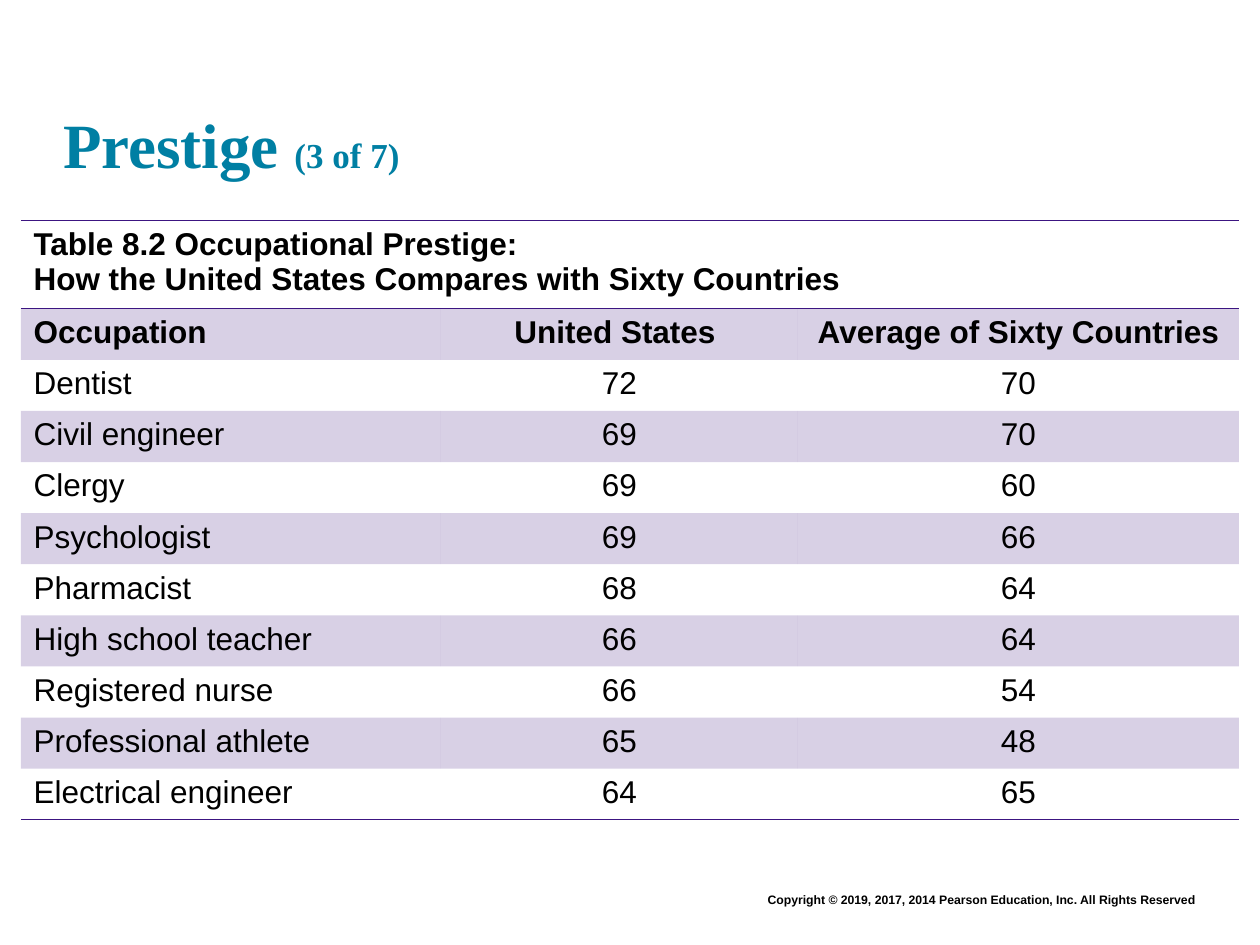
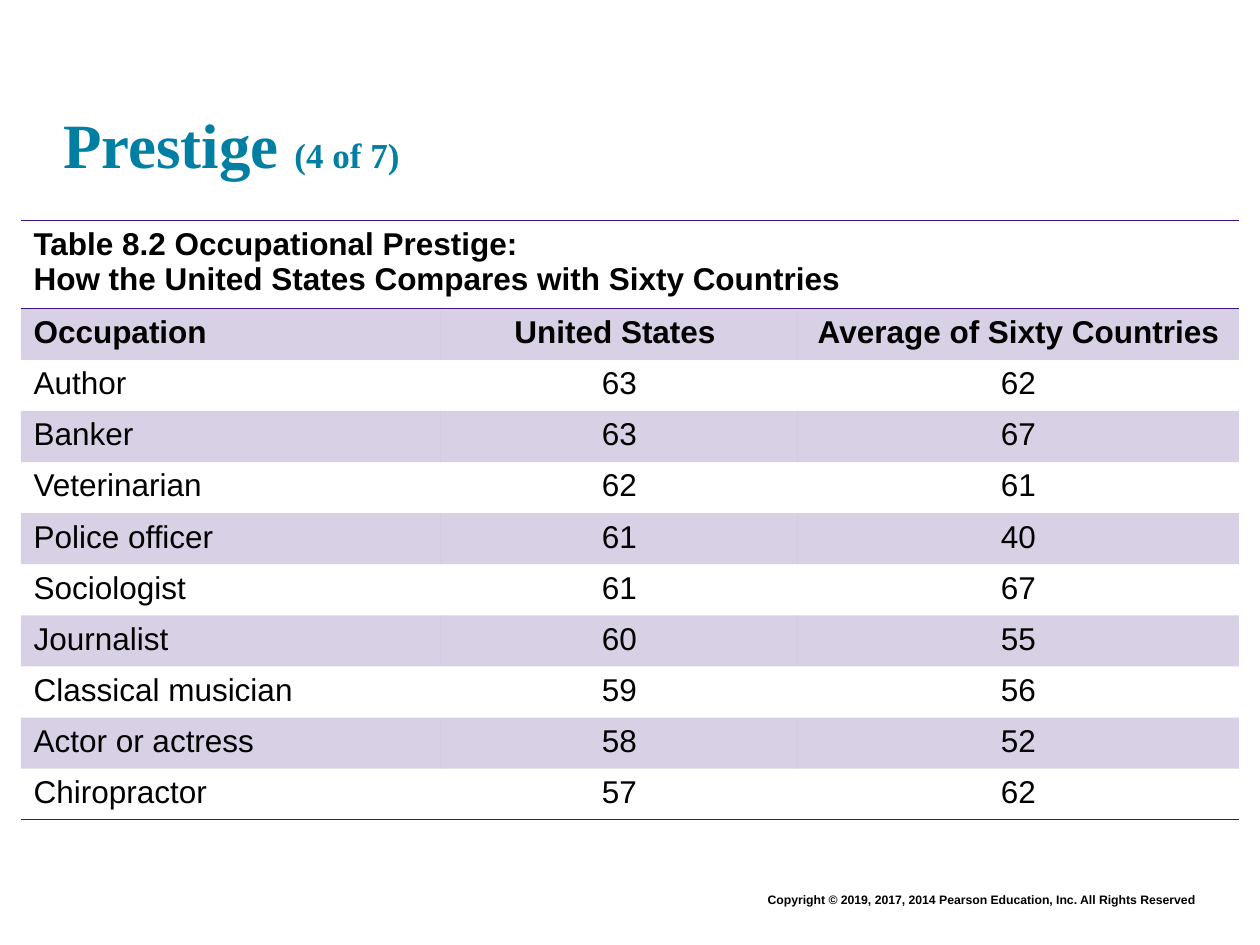
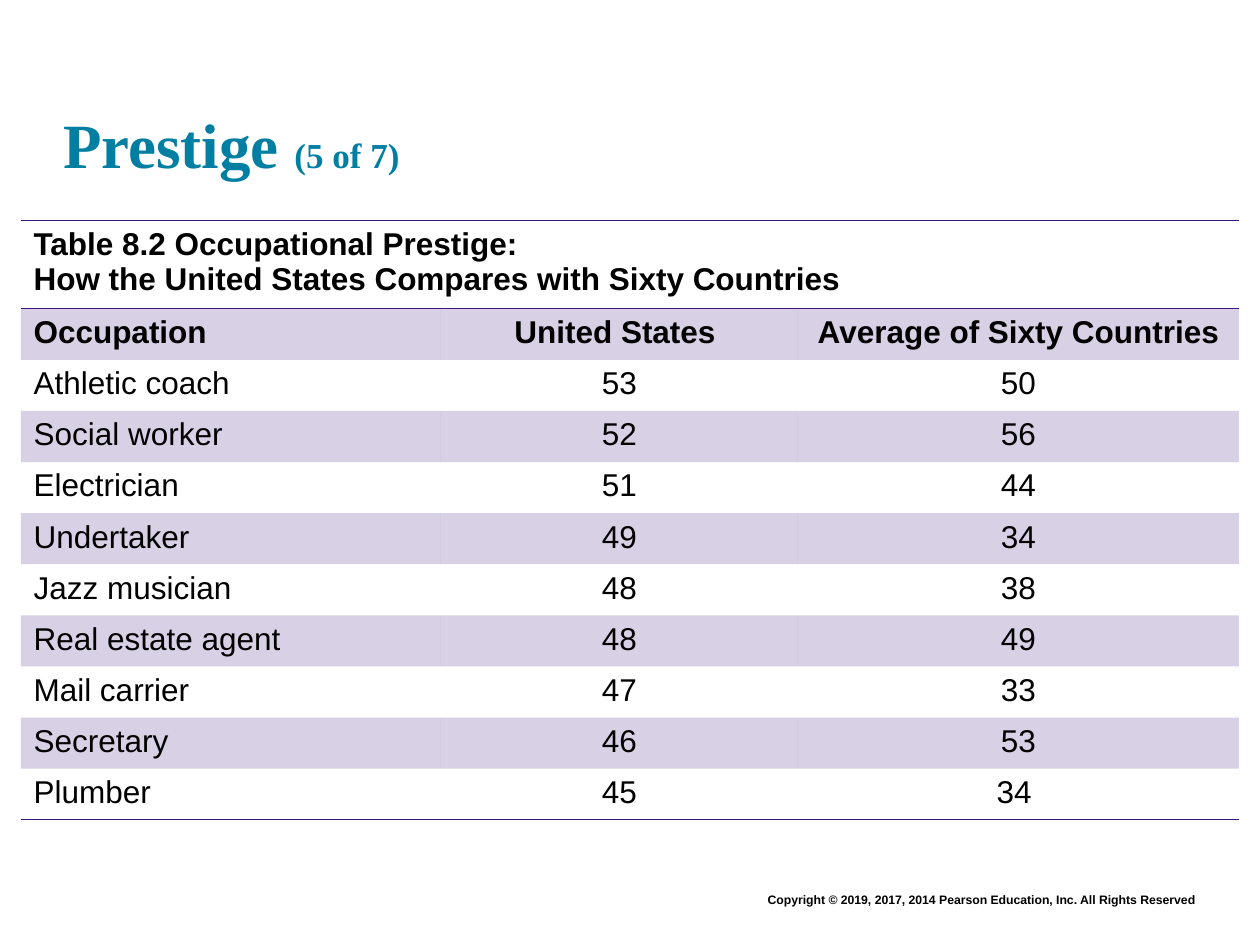
from dataclasses import dataclass
from typing import Any

from lxml import etree
from pptx import Presentation
from pptx.dml.color import RGBColor
from pptx.enum.text import MSO_ANCHOR, PP_ALIGN
from pptx.oxml.ns import qn
from pptx.util import Pt

LEFT, CENTER, RIGHT = PP_ALIGN.LEFT, PP_ALIGN.CENTER, PP_ALIGN.RIGHT
TOP, BOTTOM = MSO_ANCHOR.TOP, MSO_ANCHOR.BOTTOM
BLANK = 6
PLAIN = "{2D5ABB26-0587-4C30-8999-92F81FD0307C}"


@dataclass(frozen=True)
class Theme:
    ink: str = "000000"
    teal: str = "007FA3"
    plum: str = "3C1581"
    tint: int = 20
    serif: str = "Times New Roman"
    sans: str = "Arial"
    head: float = 36
    count: float = 20
    body: float = 18
    foot: float = 7
    rule: float = 1


@dataclass(frozen=True)
class Box:
    left: float
    top: float
    width: float
    height: float


@dataclass(frozen=True)
class Run:
    text: str
    size: float
    face: str
    color: str
    bold: bool = True


@dataclass(frozen=True)
class Job:
    name: str
    home: str
    world: str


@dataclass(frozen=True)
class Page:
    count: str
    jobs: tuple[Job, ...]


THEME = Theme()
TITLE = Box(36, 17.28, 672, 86.4)
GRID = Box(12, 126, 696, 342.72)
FOOTER = Box(126, 506.16, 564, 15.84)
COLS = (240, 204, 252)
ROW = 29.2
CAPTION = (
    "Table 8.2 Occupational Prestige:",
    "How the United States Compares with Sixty Countries",
)
HEADS = Job("Occupation", "United States ", "Average of Sixty Countries")
RIGHTS = "Copyright © 2019, 2017, 2014 Pearson Education, Inc. All Rights Reserved"

PAGES = (
    Page("(3 of 7)", (
        Job("Dentist", "72", "70"),
        Job("Civil engineer", "69", "70"),
        Job("Clergy", "69", "60"),
        Job("Psychologist", "69", "66"),
        Job("Pharmacist", "68", "64"),
        Job("High school teacher", "66", "64"),
        Job("Registered nurse", "66", "54"),
        Job("Professional athlete", "65", "48"),
        Job("Electrical engineer", "64", "65"),
    )),
    Page("(4 of 7)", (
        Job("Author", "63", "62"),
        Job("Banker", "63", "67"),
        Job("Veterinarian", "62", "61"),
        Job("Police officer", "61", "40"),
        Job("Sociologist", "61", "67"),
        Job("Journalist", "60", "55"),
        Job("Classical musician", "59", "56"),
        Job("Actor or actress", "58", "52"),
        Job("Chiropractor", "57", "62"),
    )),
    Page("(5 of 7)", (
        Job("Athletic coach", "53", "50"),
        Job("Social worker", "52", "56"),
        Job("Electrician", "51", "44"),
        Job("Undertaker", "49", "34"),
        Job("Jazz musician", "48", "38"),
        Job("Real estate agent", "48", "49"),
        Job("Mail carrier", "47", "33"),
        Job("Secretary", "46", "53"),
        Job("Plumber", "45", "34 "),
    )),
)


def apply(item: Any, form: dict[str, Any]) -> None:
    for key, value in form.items():
        setattr(item, key, value)


def place(box: Box) -> tuple[Pt, Pt, Pt, Pt]:
    return Pt(box.left), Pt(box.top), Pt(box.width), Pt(box.height)


def write(para: Any, runs: list[Run], align: PP_ALIGN) -> None:
    para.alignment = align
    for part in runs:
        run = para.add_run()
        run.text = part.text
        apply(run.font, {"size": Pt(part.size), "name": part.face, "bold": part.bold})
        run.font.color.rgb = RGBColor.from_string(part.color)


def add_text(slide: Any, box: Box, runs: list[Run], align: PP_ALIGN,
             form: dict[str, Any]) -> None:
    frame = slide.shapes.add_textbox(*place(box)).text_frame
    apply(frame, {"word_wrap": True, **form})
    write(frame.paragraphs[0], runs, align)


def fill_cell(cell: Any, tinted: bool) -> None:
    if not tinted:
        cell.fill.background()
        return
    cell.fill.solid()
    cell.fill.fore_color.rgb = RGBColor.from_string(THEME.plum)
    color = cell._tc.tcPr.find(".//" + qn("a:srgbClr"))
    etree.SubElement(color, qn("a:alpha"), val=str(THEME.tint * 1000))


def rule_cell(cell: Any, side: str) -> None:
    line = etree.Element(qn(f"a:ln{side}"), w=str(Pt(THEME.rule)))
    fill = etree.SubElement(line, qn("a:solidFill"))
    etree.SubElement(fill, qn("a:srgbClr"), val=THEME.plum)
    cell._tc.get_or_add_tcPr().insert(0, line)


def body(text: str, bold: bool) -> list[Run]:
    return [Run(text, THEME.body, THEME.sans, THEME.ink, bold)]


def add_grid(slide: Any, jobs: tuple[Job, ...]) -> None:
    rows = (HEADS, *jobs)
    shape = slide.shapes.add_table(len(rows) + 1, len(COLS), *place(GRID))
    table = shape.table
    apply(table, {"first_row": False, "horz_banding": False})
    table._tbl.tblPr.find(qn("a:tableStyleId")).text = PLAIN
    for col, width in zip(table.columns, COLS):
        col.width = Pt(width)
    for row in table.rows:
        row.height = Pt(ROW)
    shape.height = Pt(GRID.height)

    first = table.cell(0, 0)
    first.merge(table.cell(0, len(COLS) - 1))
    first.text_frame.add_paragraph()
    for para, text in zip(first.text_frame.paragraphs, CAPTION):
        write(para, body(text, True), LEFT)
    for cell in table.rows[0].cells:
        fill_cell(cell, False)
        rule_cell(cell, "B")
        rule_cell(cell, "T")

    for num, job in enumerate(rows, 1):
        texts = (job.name, job.home, job.world)
        for col, text in enumerate(texts):
            cell = table.cell(num, col)
            write(cell.text_frame.paragraphs[0], body(text, num == 1),
                  CENTER if col else LEFT)
            fill_cell(cell, num % 2 == 1)
            if num == len(rows):
                rule_cell(cell, "B")


def add_page(deck: Any, page: Page) -> None:
    slide = deck.slides.add_slide(deck.slide_layouts[BLANK])
    add_text(slide, FOOTER, [Run(RIGHTS, THEME.foot, THEME.sans, THEME.ink)],
             RIGHT, {"vertical_anchor": TOP})
    flush = dict.fromkeys(
        ("margin_left", "margin_top", "margin_right", "margin_bottom"), 0)
    add_text(slide, TITLE, [
        Run("Prestige ", THEME.head, THEME.serif, THEME.teal),
        Run(page.count, THEME.count, THEME.serif, THEME.teal),
    ], LEFT, {"vertical_anchor": BOTTOM, **flush})
    add_grid(slide, page.jobs)


def main() -> None:
    deck = Presentation()
    apply(deck, {"slide_width": Pt(720), "slide_height": Pt(540)})
    for page in PAGES:
        add_page(deck, page)
    deck.save("out.pptx")


if __name__ == "__main__":
    main()
